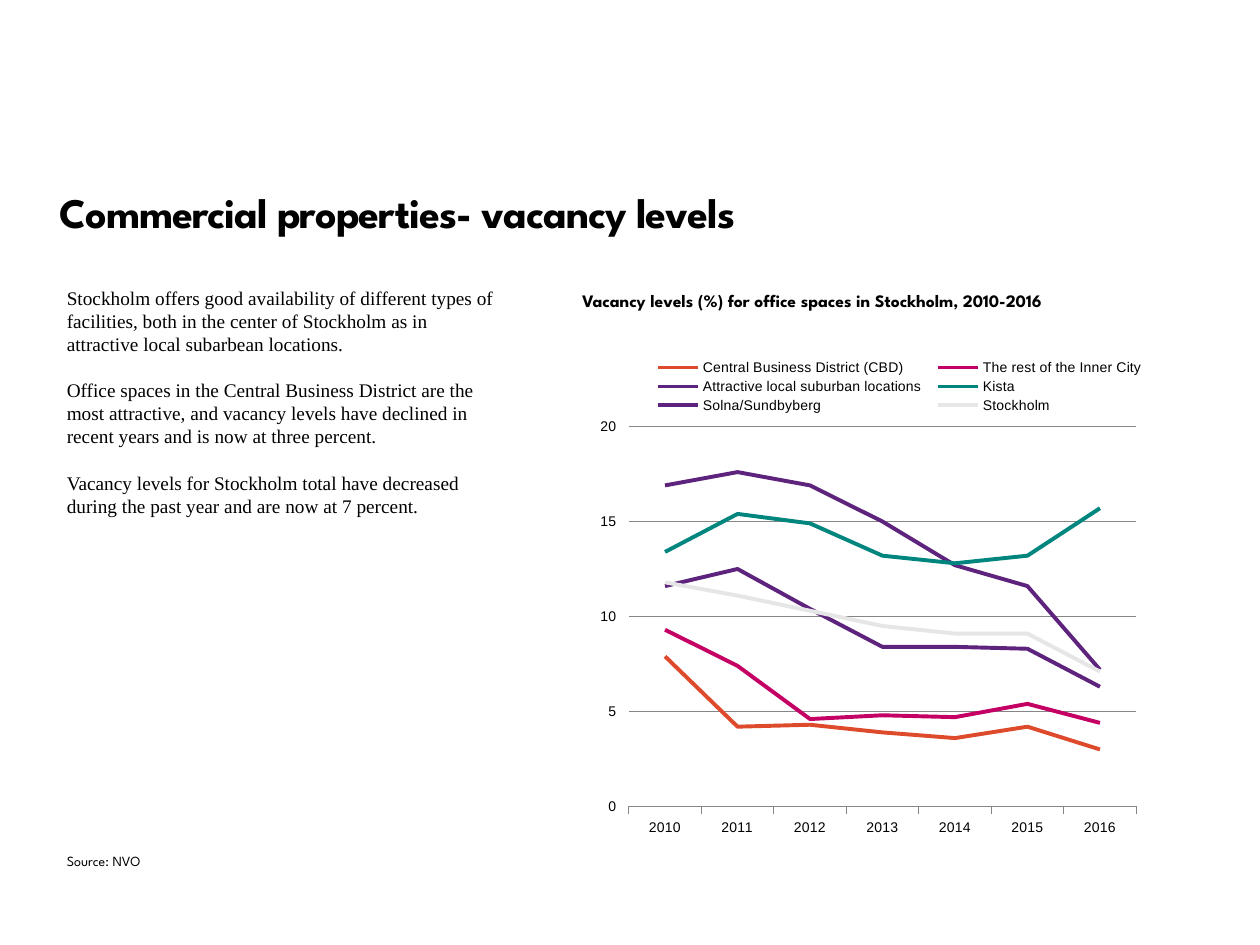
from pptx import Presentation
from pptx.chart.data import CategoryChartData
from pptx.dml.color import RGBColor
from pptx.enum.chart import XL_CHART_TYPE, XL_LEGEND_POSITION, XL_MARKER_STYLE, XL_TICK_MARK
from pptx.oxml import parse_xml
from pptx.oxml.ns import nsdecls
from pptx.util import Inches, Pt

BLACK = RGBColor(0x00, 0x00, 0x00)
GRAY = RGBColor(0x86, 0x86, 0x86)
ORANGE = RGBColor(0xDD, 0x4A, 0x2C)
MAGENTA = RGBColor(0xC4, 0x00, 0x64)
PURPLE = RGBColor(0x5D, 0x23, 0x7D)
TEAL = RGBColor(0x00, 0x86, 0x7F)
LIGHT_GRAY = RGBColor(0xE6, 0xE6, 0xE6)

presentation = Presentation()
presentation.slide_width = Inches(10)
presentation.slide_height = Inches(7.5)
slide = presentation.slides.add_slide(presentation.slide_layouts[6])


def slide_box(left, top, width, height):
    across = presentation.slide_width / 100
    down = presentation.slide_height / 100
    return int(left * across), int(top * down), int(width * across), int(height * down)


def manual_layout(left, top, width, height, target=""):
    sizes = {"x": left, "y": top, "w": width, "h": height}
    modes = "".join(f'<c:{name}Mode val="edge"/>' for name in "xy")
    values = "".join(f'<c:{name} val="{value}"/>' for name, value in sizes.items())
    return parse_xml(
        f'<c:layout {nsdecls("c")}><c:manualLayout>{target}{modes}{values}'
        "</c:manualLayout></c:layout>"
    )


body_paragraphs = [
    "Stockholm offers good availability of different types of facilities, both in the "
    "center of Stockholm as in attractive local subarbean locations.",
    "Office spaces in the Central Business District are the most attractive, and vacancy "
    "levels have declined in recent years and is now at three percent.",
    "Vacancy levels for Stockholm total have decreased during the past year and are now "
    "at 7 percent.",
]
text_blocks = [
    ((4.7, 19.87, 75.6, 11.73), ["Commercial properties- vacancy levels"],
     {"name": "League Spartan", "size": Pt(24), "bold": True},
     {"line_spacing": Pt(28)}, -50),
    ((5.3, 30.27, 34.5, 42.67), body_paragraphs,
     {"name": "Times New Roman", "size": Pt(11)},
     {"line_spacing": Pt(13.2), "space_after": Pt(13.2)}, 0),
    ((46.2, 30.67, 43.6, 6.53),
     ["Vacancy levels (%) for office spaces in Stockholm, 2010-2016"],
     {"name": "League Spartan", "size": Pt(10), "bold": True}, {}, 0),
    ((5.3, 90.27, 9.1, 6.53), ["Source: NVO"],
     {"name": "League Spartan", "size": Pt(8)}, {}, 0),
]
for area, lines, font_format, paragraph_format, spacing in text_blocks:
    text_frame = slide.shapes.add_textbox(*slide_box(*area)).text_frame
    frame_format = {"word_wrap": True, "margin_left": 0, "margin_top": 0,
                    "margin_right": 0, "margin_bottom": 0}
    for name, value in frame_format.items():
        setattr(text_frame, name, value)
    text_frame.text = "\n".join(lines)
    for paragraph in text_frame.paragraphs:
        for name, value in paragraph_format.items():
            setattr(paragraph, name, value)
        run = paragraph.runs[0]
        for name, value in font_format.items():
            setattr(run.font, name, value)
        run.font.color.rgb = BLACK
        if spacing:
            run._r.get_or_add_rPr().set("spc", str(spacing))

vacancy_series = [
    ("Central Business District (CBD)", ORANGE, (7.9, 4.2, 4.3, 3.9, 3.6, 4.2, 3)),
    ("The rest of the Inner City", MAGENTA, (9.3, 7.4, 4.6, 4.8, 4.7, 5.4, 4.4)),
    ("Attractive local suburban locations", PURPLE, (16.9, 17.6, 16.9, 15, 12.7, 11.6, 7.2)),
    ("Kista", TEAL, (13.4, 15.4, 14.9, 13.2, 12.8, 13.2, 15.7)),
    ("Solna/Sundbyberg", PURPLE, (11.6, 12.5, 10.4, 8.4, 8.4, 8.3, 6.3)),
    ("Stockholm", LIGHT_GRAY, (11.8, 11.1, 10.3, 9.5, 9.1, 9.1, 7.1)),
]
chart_data = CategoryChartData()
chart_data.categories = [str(year) for year in range(2010, 2017)]
for name, color, values in vacancy_series:
    chart_data.add_series(name, values)
chart = slide.shapes.add_chart(
    XL_CHART_TYPE.LINE, *slide_box(46.2, 37.2, 46.3, 52.93), chart_data
).chart
chart.has_title = False
for name, value in {"name": "Arial", "size": Pt(8)}.items():
    setattr(chart.font, name, value)
chart.font.color.rgb = BLACK

plot = chart.plots[0]
plot.vary_by_categories = False
for series, (name, color, values) in zip(plot.series, vacancy_series):
    series.smooth = False
    series.marker.style = XL_MARKER_STYLE.NONE
    series.format.line.width = Pt(2.25)
    series.format.line.color.rgb = color

value_axis = chart.value_axis
value_format = {"minimum_scale": 0, "maximum_scale": 20, "major_unit": 5,
                "has_major_gridlines": True, "major_tick_mark": XL_TICK_MARK.OUTSIDE}
for name, value in value_format.items():
    setattr(value_axis, name, value)
value_axis.tick_labels.number_format = "0"
value_axis.tick_labels.number_format_is_linked = False
value_axis.format.line.fill.background()
chart.category_axis.major_tick_mark = XL_TICK_MARK.OUTSIDE
for line in (value_axis.major_gridlines.format.line, chart.category_axis.format.line):
    line.width = Pt(0.75)
    line.color.rgb = GRAY

chart.has_legend = True
chart.legend.position = XL_LEGEND_POSITION.TOP
chart.legend.include_in_layout = False

chart_space = chart._chartSpace
for crossing in chart_space.xpath(".//c:valAx/c:crossBetween"):
    crossing.set("val", "midCat")
plot_area = chart_space.xpath(".//c:plotArea")[0]
for layout in plot_area.xpath("./c:layout"):
    plot_area.remove(layout)
plot_area.insert(0, manual_layout(0.08, 0.15, 0.87, 0.76, '<c:layoutTarget val="inner"/>'))
legend = chart_space.xpath(".//c:legend")[0]
for layout in legend.xpath("./c:layout"):
    legend.remove(layout)
legend.xpath("./c:legendPos")[0].addnext(manual_layout(0.11, 0.01, 0.87, 0.12))

presentation.save("out.pptx")
